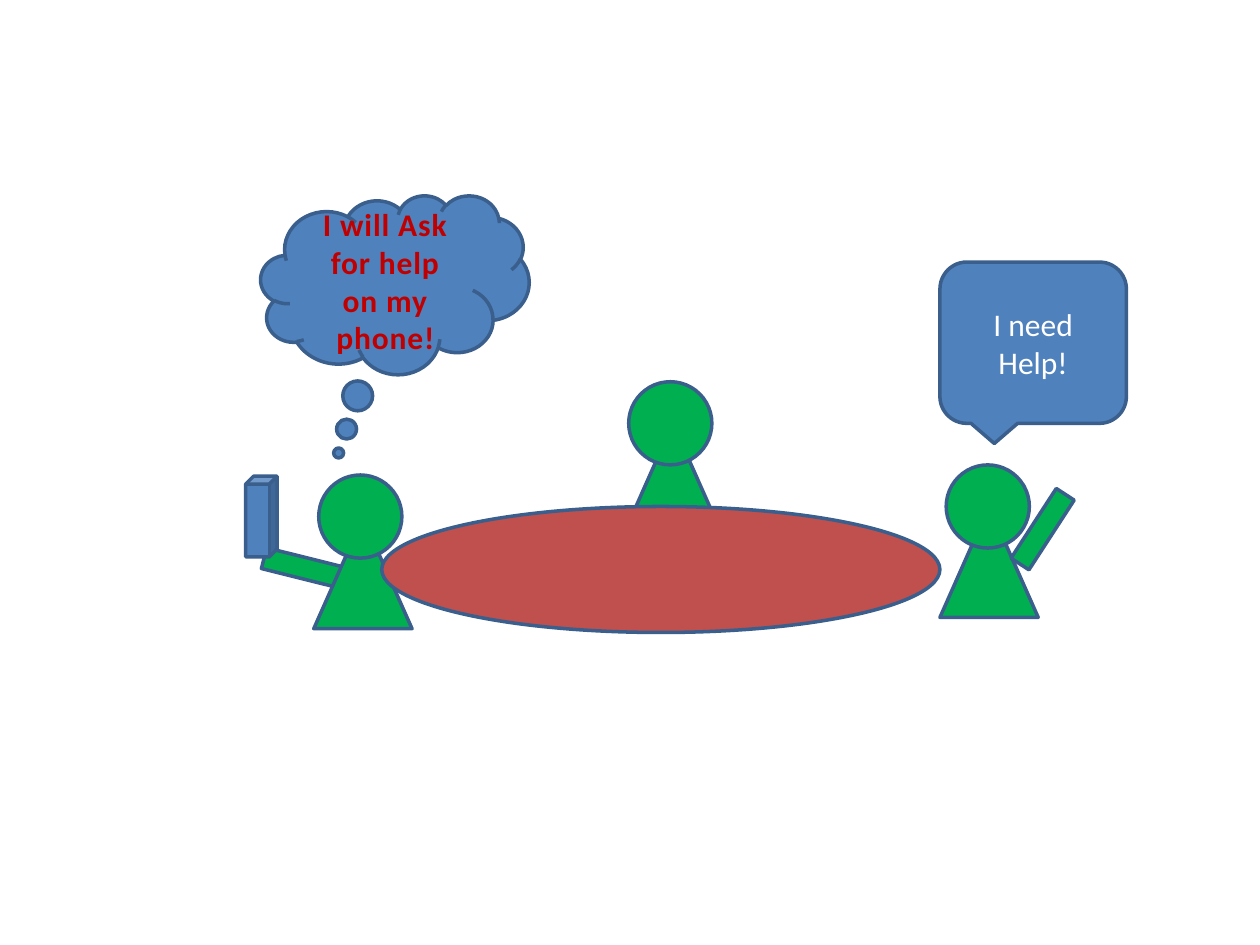
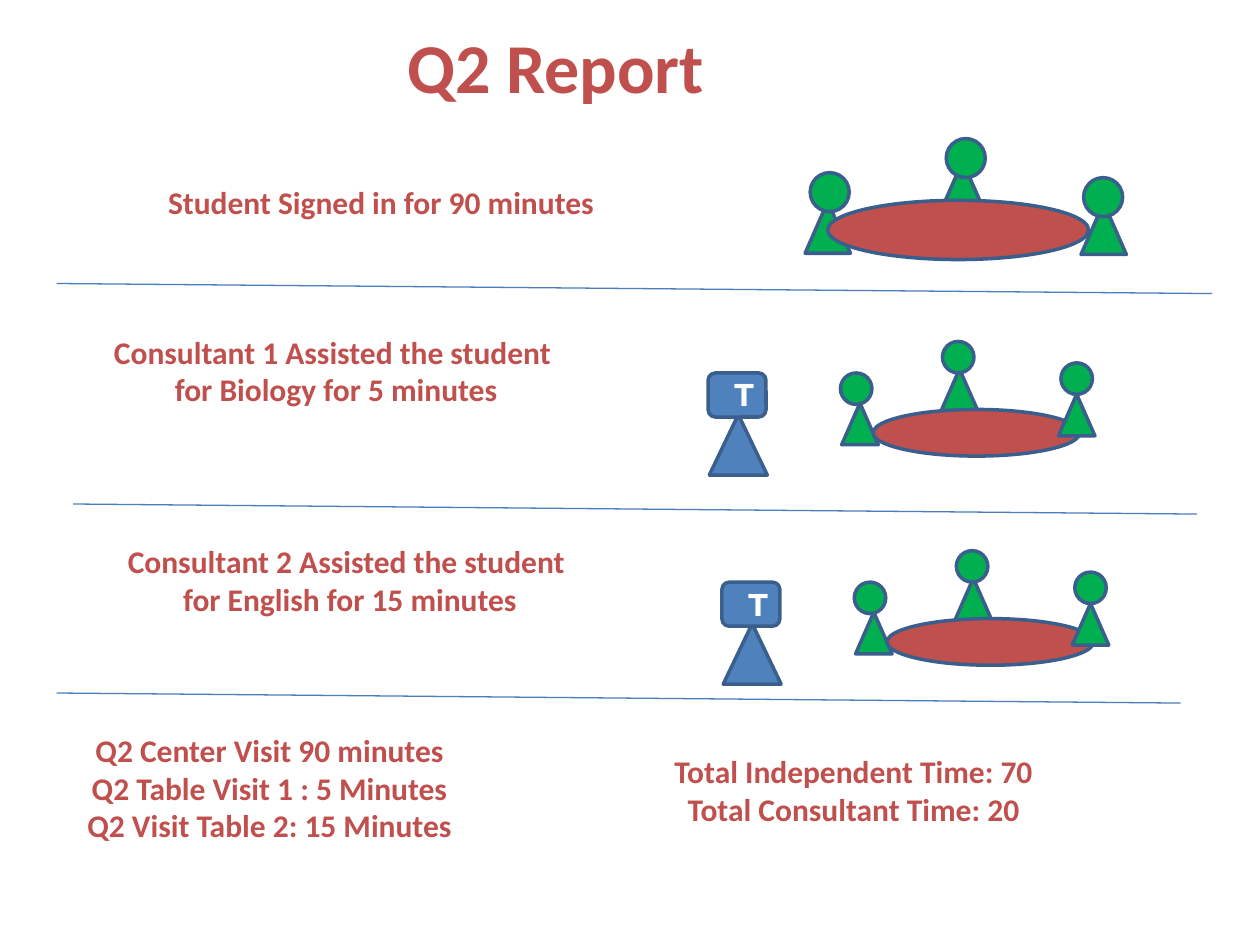
from pptx import Presentation
from pptx.dml.color import RGBColor
from pptx.enum.shapes import MSO_CONNECTOR, MSO_SHAPE
from pptx.enum.text import MSO_ANCHOR, PP_ALIGN
from pptx.oxml.ns import qn
from pptx.util import Inches, Pt
from lxml import etree

RECT = MSO_SHAPE.RECTANGLE
OVAL = MSO_SHAPE.OVAL
TRIANGLE = MSO_SHAPE.ISOSCELES_TRIANGLE
ROUND_RECT = MSO_SHAPE.ROUNDED_RECTANGLE
CUBE = MSO_SHAPE.CUBE
SPEECH = MSO_SHAPE.ROUNDED_RECTANGULAR_CALLOUT
THOUGHT = MSO_SHAPE.CLOUD_CALLOUT
STRAIGHT = MSO_CONNECTOR.STRAIGHT
CENTER = PP_ALIGN.CENTER
MIDDLE, TOP = MSO_ANCHOR.MIDDLE, MSO_ANCHOR.TOP

GREEN, BLUE, RED = "00B050", "4F81BD", "C0504D"
OUTLINE, RULE, WHITE, DARK_RED = "3A5F8C", "4B7EBC", "FFFFFF", "C00000"
TITLE_ONLY, BLANK = 5, 6

LARGE = (0.78, 0.88, 0.66)
MEDIUM = (0.36, 0.41, 0.31)
SMALL = (0.29, 0.33, 0.25)


def rgb(value):
    """Turn a hex string into a colour."""
    return RGBColor.from_string(value)


class Deck:
    """Holds the shared style and the slide being drawn."""

    def __init__(self):
        """Start an empty 10 by 7.5 inch presentation."""
        self.prs = Presentation()
        self.prs.slide_width, self.prs.slide_height = Inches(10), Inches(7.5)
        self.s = None

    def new_slide(self, layout):
        """Add a slide and make it current."""
        self.s = self.prs.slides.add_slide(self.prs.slide_layouts[layout])

    def add_lines(self, tf, lines, color, size=18, bold=True, font="Calibri",
                  wrap=True, anchor=TOP, spacing=None):
        """Fill a text frame with centred lines, one paragraph each."""
        tf.word_wrap = wrap
        tf.vertical_anchor = anchor
        for i, line in enumerate(lines):
            p = tf.paragraphs[0] if i == 0 else tf.add_paragraph()
            p.alignment = CENTER
            r = p.add_run()
            r.text = line
            r.font.name, r.font.size, r.font.bold = font, Pt(size), bold
            r.font.color.rgb = rgb(color)
            if spacing:
                r.font._element.set("spc", str(spacing))

    def title(self, text, x, y, w, h):
        """Place and format the title placeholder."""
        sp = self.s.shapes.title
        sp.left, sp.top, sp.width, sp.height = map(Inches, (x, y, w, h))
        self.add_lines(sp.text_frame, [text], RED, size=40, wrap=False)

    def text(self, lines, x, y, w, h, color=RED, **style):
        """Add a text box."""
        sp = self.s.shapes.add_textbox(*map(Inches, (x, y, w, h)))
        self.add_lines(sp.text_frame, lines, color, **style)

    def shape(self, kind, x, y, w, h, fill, rotation=0):
        """Add an outlined preset shape."""
        sp = self.s.shapes.add_shape(kind, *map(Inches, (x, y, w, h)))
        sp.shadow.inherit = False
        sp.fill.solid()
        sp.fill.fore_color.rgb = rgb(fill)
        sp.line.color.rgb = rgb(OUTLINE)
        sp.line.width = Pt(2)
        sp.rotation = rotation
        return sp

    def rule(self, x1, y1, x2, y2):
        """Add a thin dividing line."""
        line = self.s.shapes.add_connector(STRAIGHT, *map(Inches, (x1, y1, x2, y2)))
        line.line.color.rgb = rgb(RULE)
        line.line.width = Pt(0.75)
        etree.SubElement(line._element.spPr, qn("a:effectLst"))

    def person(self, size, body, head):
        """Draw a student from a triangle body and a round head."""
        w, h, d = size
        self.shape(TRIANGLE, *body, w, h, GREEN)
        self.shape(OVAL, *head, d, d, GREEN)

    def study_table(self, size, table, people, dx=0, dy=0):
        """Draw three students, the last one in front of the table."""
        x, y, w, h = table
        for i, (bx, by, hx, hy) in enumerate(people):
            if i == 2:
                self.shape(OVAL, x + dx, y + dy, w, h, RED)
            self.person(size, (bx + dx, by + dy), (hx + dx, hy + dy))

    def consultant(self, dx, dy):
        """Draw the blue consultant marked T."""
        self.shape(TRIANGLE, 5.63 + dx, 3.29 + dy, 0.46, 0.48, BLUE)
        self.shape(ROUND_RECT, 5.62 + dx, 2.96 + dy, 0.46, 0.35, BLUE)
        self.text(["T"], 5.73 + dx, 2.93 + dy, 0.31, 0.4, WHITE, font="Montserrat")


def help_slide(deck):
    """Draw students who ask for help by phone and by raised hand."""
    deck.new_slide(BLANK)
    deck.shape(RECT, 2.33, 4.18, 0.17, 0.66, GREEN, rotation=104)
    deck.study_table(LARGE, (3.03, 4.02, 4.43, 1), [
        (2.49, 4.11, 2.53, 3.77),
        (4.95, 3.36, 4.99, 3.03),
        (7.46, 4.02, 7.51, 3.69),
    ])
    deck.shape(RECT, 8.19, 3.87, 0.17, 0.66, GREEN, rotation=33)
    speech = deck.shape(SPEECH, 7.46, 2.08, 1.48, 1.28, BLUE)
    deck.add_lines(speech.text_frame, ["I need Help!"], WHITE, bold=False,
                   anchor=MIDDLE)
    deck.shape(CUBE, 1.95, 3.78, 0.25, 0.64, BLUE)
    thought = deck.shape(THOUGHT, 2.07, 1.55, 2.13, 1.42, BLUE)
    thought.adjustments[0], thought.adjustments[1] = -0.21, 0.94
    deck.add_lines(thought.text_frame, ["I will Ask for help on my phone!"], DARK_RED,
                   anchor=MIDDLE, spacing=50)


def report_slide(deck):
    """Draw the report of visits and consultant time."""
    deck.new_slide(TITLE_ONLY)
    deck.title("Q2 Report", 3.12, 0.14, 2.58, 0.77)

    deck.text(["Student Signed in for 90 minutes"], 1.22, 1.4, 3.61, 0.4, wrap=False)
    deck.study_table(MEDIUM, (6.57, 1.59, 2.07, 0.47), [
        (6.39, 1.6, 6.43, 1.37),
        (7.46, 1.28, 7.51, 1.1),
        (8.58, 1.61, 8.6, 1.41),
    ])

    visits = [(1, "Biology", 5, 0, 0), (2, "English", 15, 0.11, 1.66)]
    for number, subject, minutes, dx, dy in visits:
        deck.text([f"Consultant {number} Assisted the student",
                   f" for {subject} for {minutes} minutes"],
                  0.79 + dx, 2.59 + dy, 3.7, 0.71, wrap=False)
        deck.consultant(dx, dy)
        deck.study_table(SMALL, (6.93, 3.25, 1.64, 0.37), [
            (6.68, 3.2, 6.67, 2.96),
            (7.47, 2.93, 7.48, 2.71),
            (8.4, 3.13, 8.42, 2.88),
        ], dx, dy)

    for x1, y, x2 in [(0.45, 2.25, 9.62), (0.58, 4, 9.5), (0.45, 5.5, 9.37)]:
        deck.rule(x1, y, x2, y + 0.08)

    deck.text(["Q2 Center Visit 90 minutes", "Q2 Table Visit 1 : 5 Minutes",
               "Q2 Visit Table 2: 15 Minutes"], 0.58, 5.75, 3.12, 1.01, wrap=False)
    deck.text(["Total Independent Time: 70", "Total Consultant Time: 20"],
              5.24, 5.92, 3.07, 0.71, wrap=False)


def main():
    """Build both slides and save them."""
    deck = Deck()
    help_slide(deck)
    report_slide(deck)
    deck.prs.save("out.pptx")


if __name__ == "__main__":
    main()
